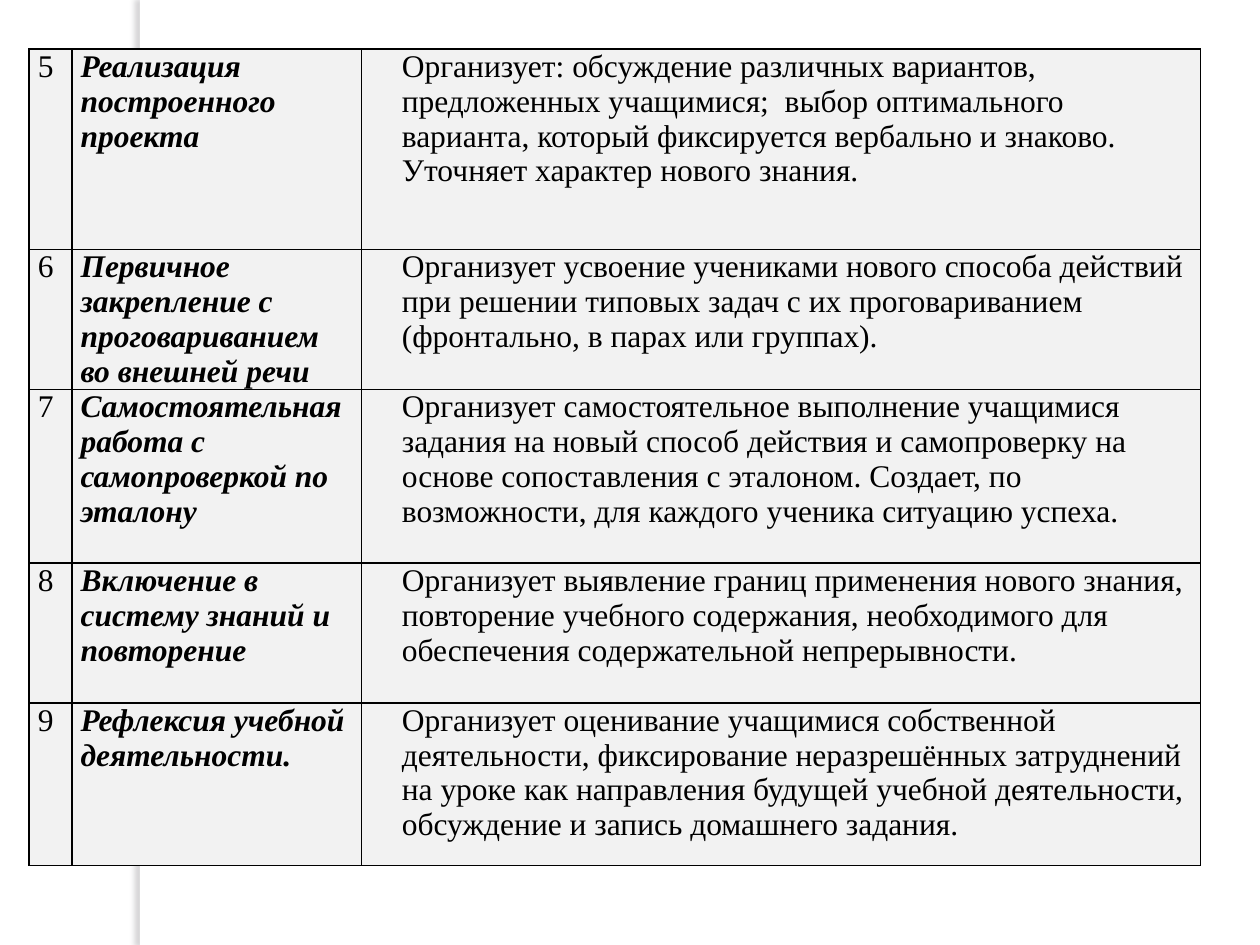
from lxml.etree import SubElement
from pptx import Presentation
from pptx.dml.color import RGBColor
from pptx.enum.shapes import MSO_SHAPE
from pptx.oxml.ns import qn
from pptx.util import Emu, Inches, Pt

COLORS = {
    "strip": "FFFFFF",
    "shadow": "646068",
    "cell": "F2F2F2",
    "ink": "000000",
}
FONT = "Times New Roman"
TABLE_LEFT, TABLE_TOP = 0.23, 0.39
COLUMN_WIDTHS = [0.34, 2.3, 6.66]
ROW_HEIGHTS = [1.59, 1.11, 1.38, 1.11, 1.29]
FIRST_STAGE = 5
STAGES = [
    ("Реализация построенного проекта",
     "Организует: обсуждение различных вариантов, предложенных учащимися;  "
     "выбор оптимального варианта, который фиксируется вербально и знаково. "
     "Уточняет характер нового знания."),
    ("Первичное закрепление с проговариванием во внешней речи",
     "Организует усвоение учениками нового способа действий при решении "
     "типовых задач с их проговариванием (фронтально, в парах или группах)."),
    ("Самостоятельная работа с самопроверкой по эталону",
     "Организует самостоятельное выполнение учащимися задания на новый способ "
     "действия и самопроверку на основе сопоставления с эталоном. Создает, по "
     "возможности, для каждого ученика ситуацию успеха."),
    ("Включение в систему знаний и повторение",
     "Организует выявление границ применения нового знания, повторение учебного "
     "содержания, необходимого для обеспечения содержательной непрерывности."),
    ("Рефлексия учебной деятельности.",
     "Организует оценивание учащимися собственной деятельности, фиксирование "
     "неразрешённых затруднений на уроке как направления будущей учебной "
     "деятельности, обсуждение и запись домашнего задания."),
]


def color(name):
    return RGBColor.from_string(COLORS[name])


def add_shadow(shape):
    """Cast a soft shadow to the left of the shape."""
    shape.shadow.inherit = False
    effects = shape.element.spPr.find(qn("a:effectLst"))
    shadow = SubElement(effects, qn("a:outerShdw"), blurRad=str(Pt(3)),
                        dist=str(Pt(3)), dir=str(180 * 60000),
                        algn="ctr", rotWithShape="0")
    tint = SubElement(shadow, qn("a:srgbClr"), val=COLORS["shadow"])
    SubElement(tint, qn("a:alpha"), val="25000")


def add_strip(slide, slide_height):
    strip = slide.shapes.add_shape(MSO_SHAPE.RECTANGLE, Inches(1.11), 0,
                                   Inches(0.08), slide_height)
    strip.fill.solid()
    strip.fill.fore_color.rgb = color("strip")
    strip.line.fill.background()
    add_shadow(strip)


def set_borders(cell):
    properties = cell._tc.get_or_add_tcPr()
    for position, side in enumerate(("a:lnL", "a:lnR", "a:lnT", "a:lnB")):
        border = SubElement(properties, qn(side), w=str(Pt(1)))
        fill = SubElement(border, qn("a:solidFill"))
        SubElement(fill, qn("a:srgbClr"), val=COLORS["ink"])
        properties.insert(position, border)


def fill_cell(cell, text, emphasis=False, indent=0):
    cell.fill.solid()
    cell.fill.fore_color.rgb = color("cell")
    set_borders(cell)
    cell.margin_left = cell.margin_right = Inches(0.07)
    cell.margin_top = cell.margin_bottom = Emu(0)
    paragraph = cell.text_frame.paragraphs[0]
    if indent:
        paragraph_properties = paragraph._p.get_or_add_pPr()
        paragraph_properties.set("marL", str(Inches(indent)))
        paragraph_properties.set("indent", "0")
    run = paragraph.add_run()
    run.text = text
    run.font.name = FONT
    run.font.size = Pt(18)
    run.font.bold = run.font.italic = emphasis
    run.font.color.rgb = color("ink")


def add_stage_table(slide):
    table = slide.shapes.add_table(
        len(STAGES), len(COLUMN_WIDTHS), Inches(TABLE_LEFT), Inches(TABLE_TOP),
        Inches(sum(COLUMN_WIDTHS)), Inches(sum(ROW_HEIGHTS))).table
    table.first_row = table.horz_banding = False
    for column, width in zip(table.columns, COLUMN_WIDTHS):
        column.width = Inches(width)
    for number, (row, height, (stage, teacher_work)) in enumerate(
            zip(table.rows, ROW_HEIGHTS, STAGES), FIRST_STAGE):
        row.height = Inches(height)
        number_cell, stage_cell, work_cell = row.cells
        fill_cell(number_cell, str(number))
        fill_cell(stage_cell, stage, emphasis=True)
        fill_cell(work_cell, teacher_work, indent=0.25)


def main():
    presentation = Presentation()
    presentation.slide_width = Inches(10)
    presentation.slide_height = Inches(7.5)
    slide = presentation.slides.add_slide(presentation.slide_layouts[6])
    add_strip(slide, presentation.slide_height)
    add_stage_table(slide)
    presentation.save("out.pptx")


if __name__ == "__main__":
    main()
